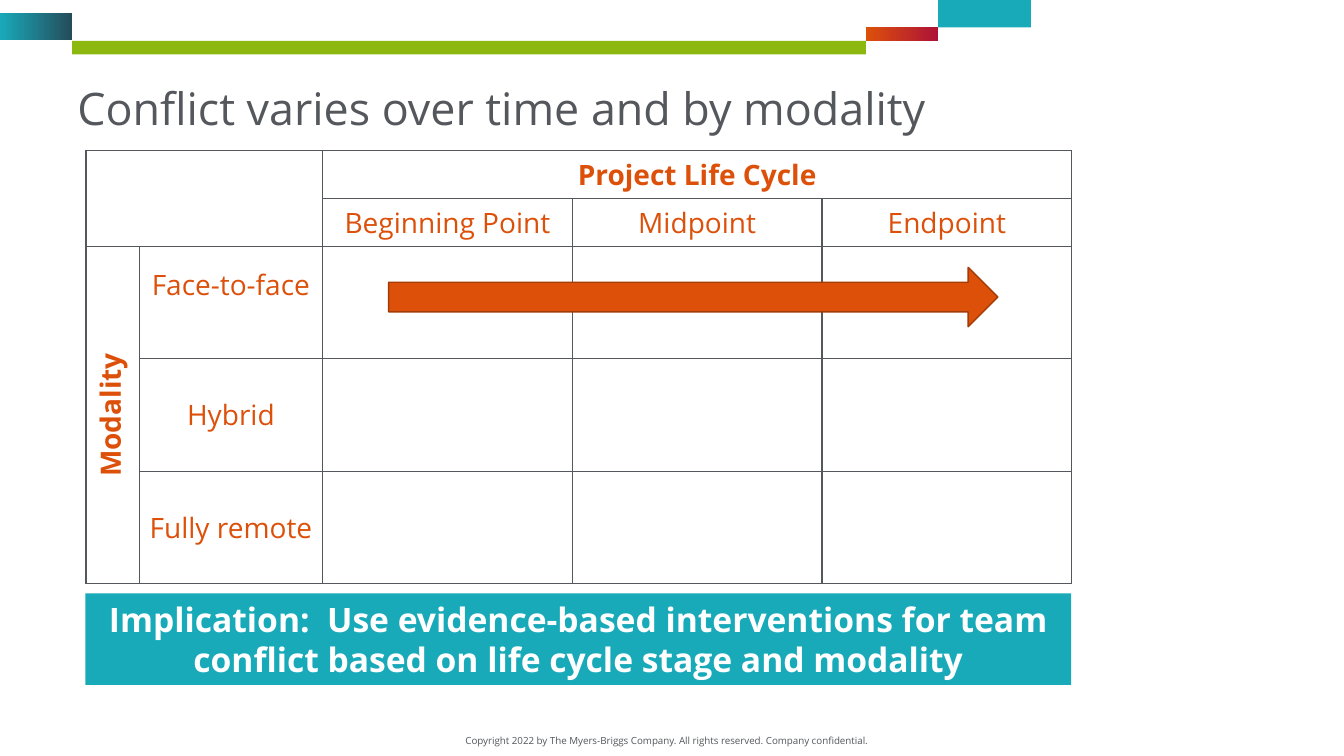
from collections import namedtuple

from lxml import etree
from pptx import Presentation
from pptx import util as u
from pptx.dml.color import RGBColor
from pptx.enum import shapes, text
from pptx.oxml import ns

FONT = "Open Sans"
COLORS = {
    "white": "FFFFFF",
    "gray": "54575B",
    "orange": "DC500A",
    "rust": "A33B07",
    "teal": "19AABA",
    "navy": "244C5A",
    "green": "8CB80F",
    "crimson": "AE1237",
}
WIDTH, HEIGHT = u.Inches(13.33), u.Inches(7.5)
COLUMN, ROW = WIDTH / 100, HEIGHT / 100
Box = namedtuple("Box", "left top width height")

STAGES = ["Beginning Point", "Midpoint", "Endpoint"]
MODALITIES = ["Face-to-face", "Hybrid", "Fully remote"]


def color(name):
    return RGBColor.from_string(COLORS[name])


def place(box):
    return (round(box.left * COLUMN), round(box.top * ROW),
            round(box.width * COLUMN), round(box.height * ROW))


def write(frame, words, size, color_name, bold=False, align="CENTER", spacing=None):
    paragraph = frame.paragraphs[0]
    paragraph.alignment = getattr(text.PP_ALIGN, align)
    paragraph.line_spacing = spacing
    run = paragraph.add_run()
    run.text = words
    for name, value in {"name": FONT, "size": u.Pt(size), "bold": bold}.items():
        setattr(run.font, name, value)
    run.font.color.rgb = color(color_name)


def add_block(slide, box, fills, kind=shapes.MSO_SHAPE.RECTANGLE):
    shape = slide.shapes.add_shape(kind, *place(box))
    shape.shadow.inherit = False
    shape.line.fill.background()
    if len(fills) == 1:
        shape.fill.solid()
        shape.fill.fore_color.rgb = color(fills[0])
    else:
        shape.fill.gradient()
        shape.fill.gradient_angle = 0
        for stop, name in zip(shape.fill.gradient_stops, fills):
            stop.color.rgb = color(name)
    return shape


def add_header_bars(slide, box):
    edges = [0, 0.07, 0.84, 0.91, 1]
    bars = [
        (0.32, 0.67, ["teal", "navy"]),
        (1, 0.33, ["green"]),
        (0.67, 0.33, ["orange", "crimson"]),
        (0, 0.67, ["teal"]),
    ]
    for left, right, (top, height, fills) in zip(edges, edges[1:], bars):
        add_block(slide, Box(box.left + left * box.width, box.top + top * box.height,
                             (right - left) * box.width, height * box.height), fills)


def add_title(slide, box):
    title = slide.shapes.title
    title.left, title.top, title.width, title.height = place(box)
    title.text_frame.vertical_anchor = text.MSO_ANCHOR.BOTTOM
    write(title.text_frame, "Conflict varies over time and by modality", 32, "gray",
          align="LEFT", spacing=0.9)


def format_cell(cell):
    properties = cell._tc.get_or_add_tcPr()
    for side in ("lnL", "lnR", "lnT", "lnB"):
        line = etree.SubElement(properties, ns.qn("a:" + side), w=str(u.Pt(1)))
        fill = etree.SubElement(line, ns.qn("a:solidFill"))
        etree.SubElement(fill, ns.qn("a:srgbClr"), val=COLORS["gray"])
    cell.fill.solid()
    cell.fill.fore_color.rgb = color("white")


def add_matrix(slide, box):
    widths = [0.054, 0.186] + [0.76 / 3] * 3
    heights = [0.111] * 2 + [0.778 / 3] * 3
    table = slide.shapes.add_table(5, 5, *place(box)).table
    table.first_row = table.horz_banding = False
    for column, share in zip(table.columns, widths):
        column.width = round(share * box.width * COLUMN)
    for row, share in zip(table.rows, heights):
        row.height = round(share * box.height * ROW)
    for cell in table.iter_cells():
        format_cell(cell)
    for first, last in [((0, 0), (1, 1)), ((0, 2), (0, 4)), ((2, 0), (4, 0))]:
        table.cell(*first).merge(table.cell(*last))

    labels = [(0, 2, "Project Life Cycle", True, "BOTTOM"), (2, 0, "Modality", True, "BOTTOM")]
    labels += [(1, 2 + i, stage, False, "TOP") for i, stage in enumerate(STAGES)]
    labels += [(2 + i, 1, name, False, "MIDDLE") for i, name in enumerate(MODALITIES)]
    for row, column, words, bold, anchor in labels:
        cell = table.cell(row, column)
        cell.vertical_anchor = getattr(text.MSO_ANCHOR, anchor)
        write(cell.text_frame, words, 20, "orange", bold)
    table.cell(2, 0)._tc.get_or_add_tcPr().set("vert", "vert270")
    table.cell(2, 1).margin_bottom = round(5.5 * ROW)

    arrow = add_block(slide, Box(box.left + 0.307 * box.width, box.top + 0.27 * box.height,
                                 0.618 * box.width, 0.137 * box.height),
                      ["orange"], shapes.MSO_SHAPE.RIGHT_ARROW)
    arrow.line.color.rgb = color("rust")
    arrow.line.width = u.Pt(1)


def add_implication(slide, box):
    frame = add_block(slide, box, ["teal"]).text_frame
    frame.word_wrap = True
    frame.vertical_anchor = text.MSO_ANCHOR.MIDDLE
    write(frame, "Implication:  Use evidence-based interventions for team conflict "
                 "based on life cycle stage and modality", 24, "white", True)


def add_copyright(slide, box):
    frame = slide.shapes.add_textbox(*place(box)).text_frame
    frame.word_wrap = True
    write(frame, "Copyright 2022 by The Myers-Briggs Company. All rights reserved. "
                 "Company confidential.", 7, "gray")


def main():
    presentation = Presentation()
    presentation.slide_width, presentation.slide_height = WIDTH, HEIGHT
    slide = presentation.slides.add_slide(presentation.slide_layouts[5])
    add_header_bars(slide, Box(0, 0, 76.7, 5.4))
    add_copyright(slide, Box(33.45, 96.5, 32.3, 2.9))
    add_title(slide, Box(5, 10, 84.8, 8.5))
    add_matrix(slide, Box(6.4, 19.9, 73.35, 57.3))
    add_implication(slide, Box(6.35, 78.5, 73.35, 12.1))
    presentation.save("out.pptx")


if __name__ == "__main__":
    main()
